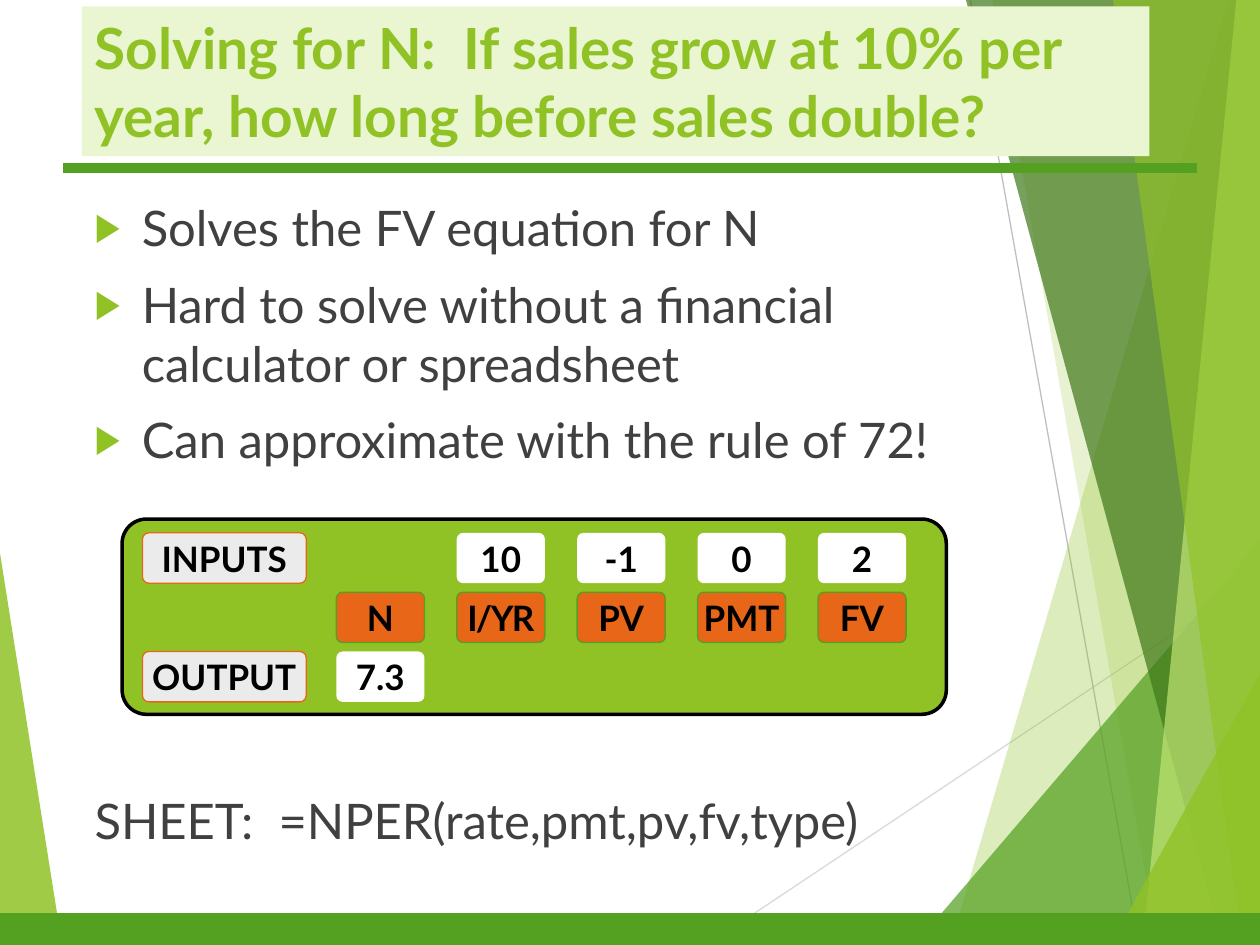
"""Builds the slide on solving for N, with a financial calculator diagram."""
from lxml import etree
from pptx import Presentation
from pptx.dml.color import RGBColor
from pptx.enum.shapes import MSO_CONNECTOR, MSO_SHAPE
from pptx.enum.text import MSO_ANCHOR, MSO_AUTO_SIZE, PP_ALIGN
from pptx.oxml.ns import qn
from pptx.util import Pt

COLORS = {
    "lime": "90C226", "green": "54A021", "forest": "3F7819", "pale": "C0E474",
    "title_bg": "EAF6D1", "text": "404040", "black": "000000", "white": "FFFFFF",
    "grey": "EBEBEB", "orange": "E76618", "light_rule": "D9D9D9", "rule": "BFBFBF",
}
WIDTH, HEIGHT = 720, 540


def paint(sp, fill, line=None, weight=0.75):
    sp.shadow.inherit = False
    sp.fill.solid()
    sp.fill.fore_color.rgb = RGBColor.from_string(COLORS[fill])
    if line:
        sp.line.color.rgb = RGBColor.from_string(COLORS[line])
        sp.line.width = Pt(weight)
    else:
        sp.line.fill.background()


def add_run(p, text, size, color, bold=False):
    r = p.add_run()
    r.text = text
    r.font.name = "Lato"
    r.font.size = Pt(size)
    r.font.bold = bold
    r.font.color.rgb = RGBColor.from_string(COLORS[color])
    return r


prs = Presentation()
prs.slide_width, prs.slide_height = Pt(WIDTH), Pt(HEIGHT)
slide = prs.slides.add_slide(prs.slide_layouts[1])
shapes = slide.shapes

rules = [
    (404, HEIGHT, WIDTH, 329, "light_rule", 0.75),
    (554.5, 0, 651, HEIGHT, "rule", 0.75),
    (36, 96, 684, 96, "green", 6),
]
for x1, y1, x2, y2, color, weight in rules:
    line = shapes.add_connector(MSO_CONNECTOR.STRAIGHT, Pt(x1), Pt(y1), Pt(x2), Pt(y2))
    line.line.color.rgb = RGBColor.from_string(COLORS[color])
    line.line.width = Pt(weight)
    etree.SubElement(line._element.spPr, qn("a:effectLst"))
title_rule = line

facets = [
    (0, 316, 35.5, 0, "lime", 85),
    (702, 0, 543, WIDTH, "lime", 30),
    (567, 0, 661.5, WIDTH, "lime", 20),
    (WIDTH, 309, 522.5, WIDTH, "green", 72),
    (552, 0, 698.5, WIDTH, "forest", 70),
    (706.5, 0, 653, WIDTH, "pale", 70),
    (636, 0, 710, WIDTH, "lime", 65),
    (WIDTH, 385, 634.5, WIDTH, "lime", 80),
]
for top_x, top_y, bottom_x, side, color, alpha in facets:
    fb = shapes.build_freeform(Pt(top_x), Pt(top_y), scale=1)
    corners = [(bottom_x, HEIGHT), (side, HEIGHT), (side, top_y)]
    fb.add_line_segments([(Pt(x), Pt(y)) for x, y in corners], close=True)
    sp = fb.convert_to_shape()
    paint(sp, color)
    clr = sp._element.spPr.find(qn("a:solidFill"))[0]
    etree.SubElement(clr, qn("a:alpha"), val=str(alpha * 1000))
shapes._spTree.append(title_rule._element)

footer = shapes.add_shape(MSO_SHAPE.RECTANGLE, Pt(0), Pt(522), Pt(WIDTH), Pt(18))
paint(footer, "green", "green")

title, body = shapes.title, slide.placeholders[1]
for sp, top, width, height in [(title, 3.6, 610, 85.7), (body, 109.5, 549, 305)]:
    sp.left, sp.top, sp.width, sp.height = Pt(46.8), Pt(top), Pt(width), Pt(height)
    sp.text_frame.auto_size = MSO_AUTO_SIZE.NONE
    sp.text_frame.word_wrap = True
    shapes._spTree.append(sp._element)

title.fill.solid()
title.fill.fore_color.rgb = RGBColor.from_string(COLORS["title_bg"])
title.text_frame.vertical_anchor = MSO_ANCHOR.MIDDLE
p = title.text_frame.paragraphs[0]
p.alignment = PP_ALIGN.LEFT
add_run(p, "Solving for N:  If sales grow at 10% per year, how long before sales double?",
        32.4, "lime", True)

tf = body.text_frame
tf.vertical_anchor = MSO_ANCHOR.TOP
items = [
    ("Solves the FV equation for N", 10, True),
    ("Hard to solve without a financial calculator or spreadsheet", 10, True),
    ("Can approximate with the rule of 72!", 10, True),
    ("SHEET:  =NPER(rate,pmt,pv,fv,type)", 184.4, False),
]
for i, (text, space, bulleted) in enumerate(items):
    p = tf.add_paragraph() if i else tf.paragraphs[0]
    p.space_before = Pt(space)
    pPr = p._p.get_or_add_pPr()
    pPr.set("marL", str(Pt(27)))
    pPr.set("indent", str(Pt(-27)))
    if bulleted:
        clr = etree.SubElement(pPr, qn("a:buClr"))
        etree.SubElement(clr, qn("a:srgbClr"), val=COLORS["lime"])
        etree.SubElement(pPr, qn("a:buSzPct"), val="80000")
        etree.SubElement(pPr, qn("a:buChar"), char="▶")
    else:
        etree.SubElement(pPr, qn("a:buNone"))
    add_run(p, text, 28, "text")

panel = shapes.add_shape(MSO_SHAPE.ROUNDED_RECTANGLE, Pt(69.8), Pt(296.6), Pt(471), Pt(111.6))
panel.adjustments[0] = 0.125
paint(panel, "lime", "black", 2)

label_x, key_x, key_step = 81.4, 192.2, 68.8
row_y, row_step = 304.5, 33.9
keys = ["N", "I/YR", "PV", "PMT", "FV"]
inputs = ["10", "-1", "0", "2"]
cells = [("INPUTS", label_x, 0, 93.6, "grey", "orange"),
         ("OUTPUT", label_x, 2, 93.6, "grey", "orange"),
         ("7.3", key_x, 2, 50.4, "white", None)]
cells += [(k, key_x + i * key_step, 1, 50.4, "orange", "green") for i, k in enumerate(keys)]
cells += [(v, key_x + i * key_step, 0, 50.4, "white", None) for i, v in enumerate(inputs, 1)]
for text, x, row, width, fill, outline in cells:
    sp = shapes.add_shape(MSO_SHAPE.ROUNDED_RECTANGLE, Pt(x), Pt(row_y + row * row_step),
                          Pt(width), Pt(28.8))
    sp.adjustments[0] = 0.125
    paint(sp, fill, outline)
    tf = sp.text_frame
    tf.word_wrap = False
    tf.vertical_anchor = MSO_ANCHOR.MIDDLE
    p = tf.paragraphs[0]
    p.alignment = PP_ALIGN.CENTER
    r = add_run(p, text, 20, "black", True)
    if text == "I/YR":
        r._r.get_or_add_rPr().set("spc", "-100")

prs.save("out.pptx")
